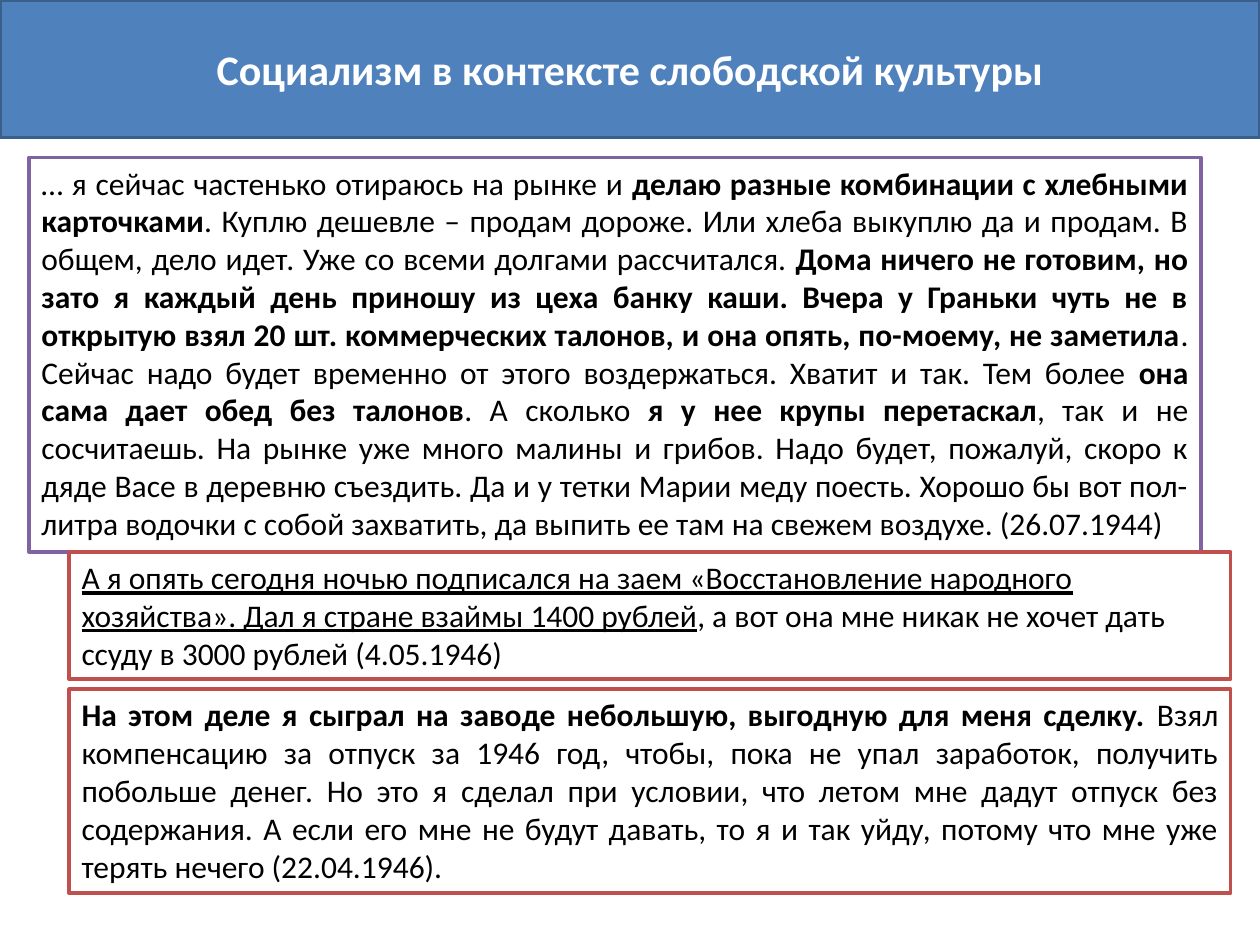
from pptx import Presentation
from pptx.dml.color import RGBColor
from pptx.enum import shapes, text
from pptx.util import Pt

COLORS = {
    "white": "FFFFFF",
    "black": "000000",
    "blue": "4F81BD",
    "dark_blue": "3A5F8C",
    "purple": "8064A2",
    "red": "C0504D",
}
LEFT = text.PP_ALIGN.LEFT
CENTER = text.PP_ALIGN.CENTER
JUSTIFY = text.PP_ALIGN.JUSTIFY
BOLD = {"bold": True}
UNDERLINE = {"underline": True}


class SlideBuilder:
    font_name = "Calibri"
    line_width = 2

    def __init__(self, slide):
        self.slide = slide

    def color(self, name):
        return RGBColor.from_string(COLORS[name])

    def place(self, shape, box):
        for name, value in zip(("left", "top", "width", "height"), box):
            setattr(shape, name, Pt(value))

    def paint(self, shape, fill, line):
        shape.fill.solid()
        shape.fill.fore_color.rgb = self.color(fill)
        shape.line.color.rgb = self.color(line)
        shape.line.width = Pt(self.line_width)

    def add_words(self, shape, runs, size, color, align, anchor):
        frame = shape.text_frame
        frame_format = {
            "word_wrap": True,
            "auto_size": text.MSO_AUTO_SIZE.NONE,
            "vertical_anchor": anchor,
        }
        for name, value in frame_format.items():
            setattr(frame, name, value)
        paragraph = frame.paragraphs[0]
        paragraph.alignment = align
        for words, emphasis in runs:
            run = paragraph.add_run()
            run.text = words
            run.font.color.rgb = self.color(color)
            font_format = {"name": self.font_name, "size": Pt(size), "bold": False}
            for name, value in {**font_format, **emphasis}.items():
                setattr(run.font, name, value)

    def title(self, words, box):
        shape = self.slide.shapes.title
        self.place(shape, box)
        self.paint(shape, "blue", "dark_blue")
        self.add_words(shape, [(words, BOLD)], 24, "white", CENTER, text.MSO_ANCHOR.MIDDLE)

    def quote(self, runs, box, line, align=JUSTIFY):
        shape = self.slide.shapes.add_shape(
            shapes.MSO_SHAPE.RECTANGLE, *(Pt(value) for value in box))
        shape.shadow.inherit = False
        self.paint(shape, "white", line)
        self.add_words(shape, runs, 18, "black", align, text.MSO_ANCHOR.TOP)


def main():
    presentation = Presentation()
    presentation.slide_width = Pt(720)
    presentation.slide_height = Pt(540)
    title_only = presentation.slide_layouts[5]
    builder = SlideBuilder(presentation.slides.add_slide(title_only))

    # Title banner
    builder.title("Социализм в контексте слободской культуры", (0, 0, 720, 78.5))

    # Diary entry of 1944
    builder.quote([
        ("… я сейчас частенько отираюсь на рынке и ", {}),
        ("делаю разные комбинации с хлебными карточками", BOLD),
        (". Куплю дешевле – продам дороже. Или хлеба выкуплю да и продам. "
         "В общем, дело идет. Уже со всеми долгами рассчитался. ", {}),
        ("Дома ничего не готовим, но зато я каждый день приношу из цеха банку каши. "
         "Вчера у Граньки чуть не в открытую взял 20 шт. коммерческих талонов, "
         "и она опять, по-моему, не заметила", BOLD),
        (". Сейчас надо будет временно от этого воздержаться. Хватит и так. "
         "Тем более ", {}),
        ("она сама дает обед без талонов", BOLD),
        (". А сколько ", {}),
        ("я у нее крупы перетаскал", BOLD),
        (", так и не сосчитаешь. На рынке уже много малины и грибов. "
         "Надо будет, пожалуй, скоро к дяде Васе в деревню съездить. "
         "Да и у тетки Марии меду поесть. Хорошо бы вот пол-литра водочки "
         "с собой захватить, да выпить ее там на свежем воздухе. (26.07.1944)", {}),
    ], (16.6, 90, 669.6, 225.4), "purple")

    # Diary entries of 1946
    builder.quote([
        ("А я опять сегодня ночью подписался на заем «Восстановление народного "
         "хозяйства». Дал я стране взаймы 1400 рублей", UNDERLINE),
        (", а вот она мне никак не хочет дать ссуду в 3000 рублей (4.05.1946)", {}),
    ], (39.5, 315.4, 663.8, 72.7), "red", LEFT)
    builder.quote([
        ("На этом деле я сыграл на заводе небольшую, выгодную для меня сделку. ", BOLD),
        ("Взял компенсацию за отпуск за 1946 год, чтобы, пока не упал заработок, "
         "получить побольше денег. Но это я сделал при условии, что летом мне дадут "
         "отпуск без содержания. А если его мне не будут давать, то я и так уйду, "
         "потому что мне уже терять нечего (22.04.1946). ", {}),
    ], (39.5, 393.8, 663.8, 116.6), "red")

    presentation.save("out.pptx")


if __name__ == "__main__":
    main()
